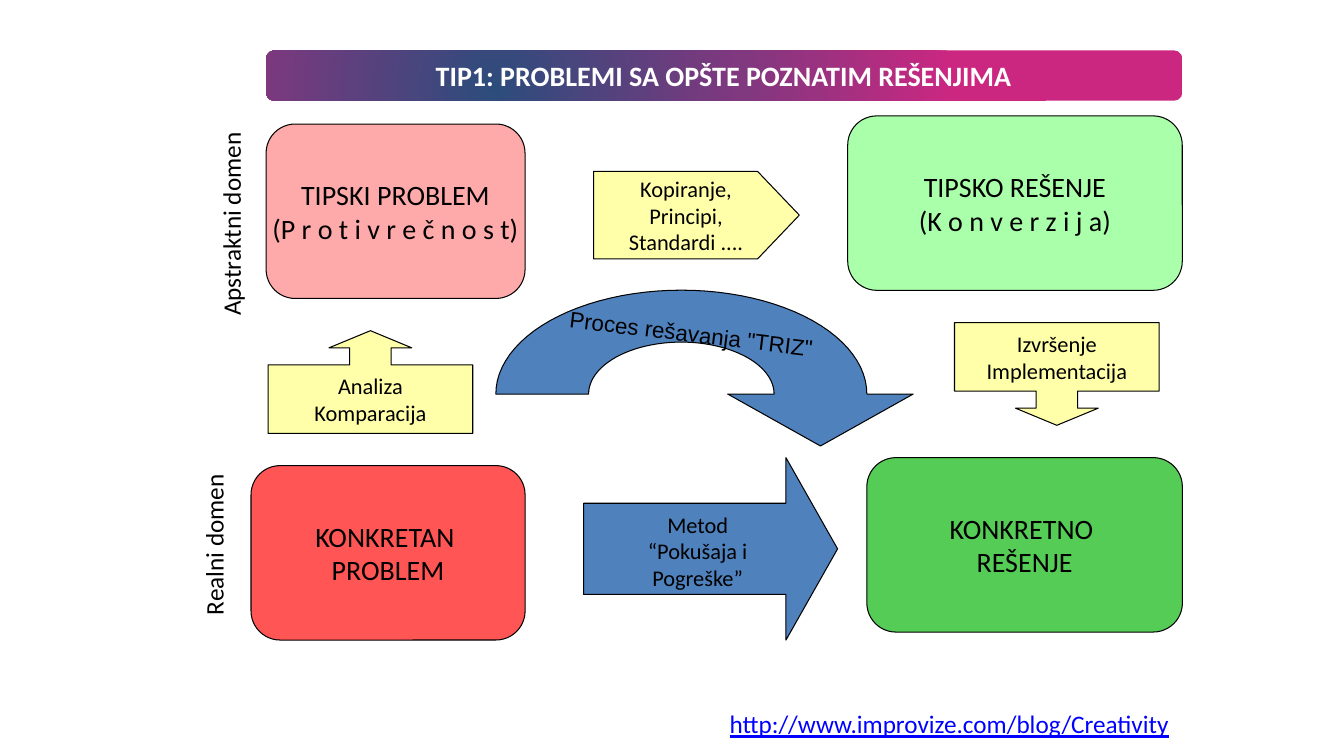
from dataclasses import dataclass
from math import cos, pi, sin

from lxml.etree import fromstring
from pptx import Presentation
from pptx.dml.color import RGBColor
from pptx.enum.shapes import MSO_SHAPE
from pptx.enum.text import MSO_ANCHOR, PP_ALIGN
from pptx.shapes.autoshape import Shape
from pptx.shapes.shapetree import GroupShapes, SlideShapes
from pptx.util import Pt

BLACK = RGBColor(0x00, 0x00, 0x00)
WHITE = RGBColor(0xFF, 0xFF, 0xFF)
LINK_BLUE = RGBColor(0x00, 0x00, 0xFF)
STEEL = RGBColor(0x4F, 0x81, 0xBD)
YELLOW = RGBColor(0xFF, 0xFF, 0xAA)
PINK = RGBColor(0xFF, 0xAA, 0xAA)
RED = RGBColor(0xFF, 0x55, 0x55)
MINT = RGBColor(0xAA, 0xFF, 0xAA)
GREEN = RGBColor(0x55, 0xCC, 0x55)
NAVY = RGBColor(0x2C, 0x4C, 0x7C)
PURPLE = RGBColor(0x80, 0x38, 0x7F)
MAGENTA = RGBColor(0xCB, 0x27, 0x81)

BANNER_STOPS = ((0, NAVY), (53, PURPLE), (54, PURPLE), (100, MAGENTA))
DRAWING_NS = "http://schemas.openxmlformats.org/drawingml/2006/main"
ROUND = (0.167,)
CALLOUT = (0.403, 0.403, 0.167, 0.667)
Frame = tuple[float, float, float, float]


@dataclass
class Block:
    kind: MSO_SHAPE
    frame: Frame
    fill: RGBColor
    lines: tuple[str, ...]
    adjustments: tuple[float, ...]
    size: float = 16
    rotation: float = 0
    top_inset: float = 3.6


@dataclass
class Label:
    frame: Frame
    text: str
    size: float = 18
    font: str = "Calibri"
    rotation: float = 0
    color: RGBColor = BLACK
    align: PP_ALIGN = PP_ALIGN.LEFT
    underline: bool = False
    bold: bool = False


BLOCKS = (
    Block(MSO_SHAPE.ROUNDED_RECTANGLE, (190.1, 88.6, 185, 124.6), PINK,
          ("TIPSKI PROBLEM", "(P r o t i v r e č n o s t)"), ROUND, 20),
    Block(MSO_SHAPE.ROUNDED_RECTANGLE, (619.2, 326.9, 225.4, 124.6), GREEN,
          ("KONKRETNO ", "REŠENJE"), ROUND, 20),
    Block(MSO_SHAPE.ROUNDED_RECTANGLE, (179.3, 332.6, 195.8, 124.6), RED,
          ("KONKRETAN ", "PROBLEM"), ROUND, 20),
    Block(MSO_SHAPE.ROUNDED_RECTANGLE, (605.5, 82.8, 239, 124.6), MINT,
          ("TIPSKO REŠENJE", "(K o n v e r z i j a)"), ROUND, 20),
    Block(MSO_SHAPE.UP_ARROW_CALLOUT, (191.5, 236.2, 146.2, 73.4), YELLOW,
          ("Analiza", "Komparacija"), CALLOUT),
    Block(MSO_SHAPE.UP_ARROW_CALLOUT, (681.8, 230.4, 146.2, 73.4), YELLOW,
          ("Izvršenje", "Implementacija"), CALLOUT, rotation=180),
    Block(MSO_SHAPE.PENTAGON, (424.1, 122.4, 146.9, 62.6), YELLOW,
          ("Kopiranje,", "Principi,", "Standardi ...."), (0.477,)),
    Block(MSO_SHAPE.RIGHT_ARROW, (416.9, 326.9, 181.4, 130.3), STEEL,
          ("Metod", " “Pokušaja i ", "Pogreške”"), (0.5, 0.283), top_inset=6.6),
)

LABELS = (
    Label((382.3, 224.6, 213.1, 108), "Proces rešavanja \"TRIZ\"", 16, "Arial",
          6.8, align=PP_ALIGN.CENTER),
    Label((514.1, 502.6, 336.2, 28.8), "http://www.improvize.com/blog/Creativity",
          color=LINK_BLUE, underline=True),
    Label((94.3, 373.7, 116.6, 28.8), "Realni domen", rotation=270),
    Label((91.4, 144.7, 146.9, 28.8), "Apstraktni domen", rotation=270),
)
TITLE = Label((191.5, 37.4, 650.9, 32.4), "TIP1: PROBLEMI SA OPŠTE POZNATIM REŠENJIMA",
              20, color=WHITE, align=PP_ALIGN.CENTER, bold=True)


def style_outline(sp: Shape, fill: RGBColor) -> None:
    sp.shadow.inherit = False
    sp.fill.solid()
    sp.fill.fore_color.rgb = fill
    sp.line.color.rgb = BLACK
    sp.line.width = Pt(0.75)


def write_lines(sp: Shape, lines: tuple[str, ...], align: PP_ALIGN,
                color: RGBColor, formats: dict) -> None:
    tf = sp.text_frame
    tf.word_wrap = False
    for i, line in enumerate(lines):
        p = tf.add_paragraph() if i else tf.paragraphs[0]
        p.alignment = align
        r = p.add_run()
        r.text = line
        r.font.color.rgb = color
        for name, value in formats.items():
            setattr(r.font, name, value)


def draw_block(shapes: SlideShapes, block: Block) -> None:
    sp = shapes.add_shape(block.kind, *map(Pt, block.frame))
    for i, value in enumerate(block.adjustments):
        sp.adjustments[i] = value
    style_outline(sp, block.fill)
    write_lines(sp, block.lines, PP_ALIGN.CENTER, BLACK,
                {"size": Pt(block.size), "name": "Calibri"})
    sp.text_frame.vertical_anchor = MSO_ANCHOR.MIDDLE
    sp.text_frame.margin_top = Pt(block.top_inset)
    if block.rotation:
        sp.rotation = block.rotation
        sp.text_frame._txBody.bodyPr.set("rot", str(int(block.rotation * 60000)))


def draw_label(shapes: SlideShapes | GroupShapes, label: Label) -> Shape:
    sp = shapes.add_textbox(*map(Pt, label.frame))
    sp.rotation = label.rotation
    write_lines(sp, (label.text,), label.align, label.color,
                {"size": Pt(label.size), "name": label.font,
                 "bold": label.bold, "underline": label.underline})
    return sp


def draw_curved_arrow(shapes: SlideShapes) -> None:
    cx, cy, rx, ry, steps = 486.7, 281.5, 132.5, 74.2, 48
    angles = [pi * i / steps for i in range(steps + 1)]
    inner = [(cx + rx / 2 * cos(a), cy - ry / 2 * sin(a)) for a in angles]
    outer = [(cx + rx * cos(a), cy - ry * sin(a)) for a in reversed(angles)]
    head = [(cx + rx * 1.25, cy), (cx + rx * 0.75, cy + ry / 2), (cx + rx / 4, cy)]
    points = [(Pt(x), Pt(y)) for x, y in inner + outer + head]
    builder = shapes.build_freeform(*points[0])
    builder.add_line_segments(points[1:], close=True)
    style_outline(builder.convert_to_shape(), STEEL)


def draw_banner(shapes: SlideShapes) -> None:
    group = shapes.add_group_shape()
    sp = group.shapes.add_shape(MSO_SHAPE.ROUNDED_RECTANGLE,
                                Pt(190.1), Pt(36), Pt(654.5), Pt(36))
    sp.shadow.inherit = False
    sp.line.fill.background()
    stops = "".join(f'<a:gs pos="{pos * 1000}"><a:srgbClr val="{color}"/></a:gs>'
                    for pos, color in BANNER_STOPS)
    gradient = fromstring(
        f'<a:gradFill xmlns:a="{DRAWING_NS}" rotWithShape="1"><a:gsLst>{stops}</a:gsLst>'
        '<a:path path="circle"><a:fillToRect l="50000" t="100000" r="100000" b="50000"/>'
        '</a:path></a:gradFill>')
    sp._element.spPr.find(f"{{{DRAWING_NS}}}prstGeom").addnext(gradient)
    title = draw_label(group.shapes, TITLE)
    title.text_frame.word_wrap = True
    title.text_frame.vertical_anchor = MSO_ANCHOR.MIDDLE
    for side in ("left", "top", "right", "bottom"):
        setattr(title.text_frame, f"margin_{side}", Pt(6))


def main() -> None:
    prs = Presentation()
    prs.slide_width, prs.slide_height = Pt(960), Pt(540)
    s = prs.slides.add_slide(prs.slide_layouts[6])
    for block in BLOCKS:
        draw_block(s.shapes, block)
    draw_curved_arrow(s.shapes)
    for label in LABELS:
        draw_label(s.shapes, label)
    draw_banner(s.shapes)
    prs.save("out.pptx")


if __name__ == "__main__":
    main()
